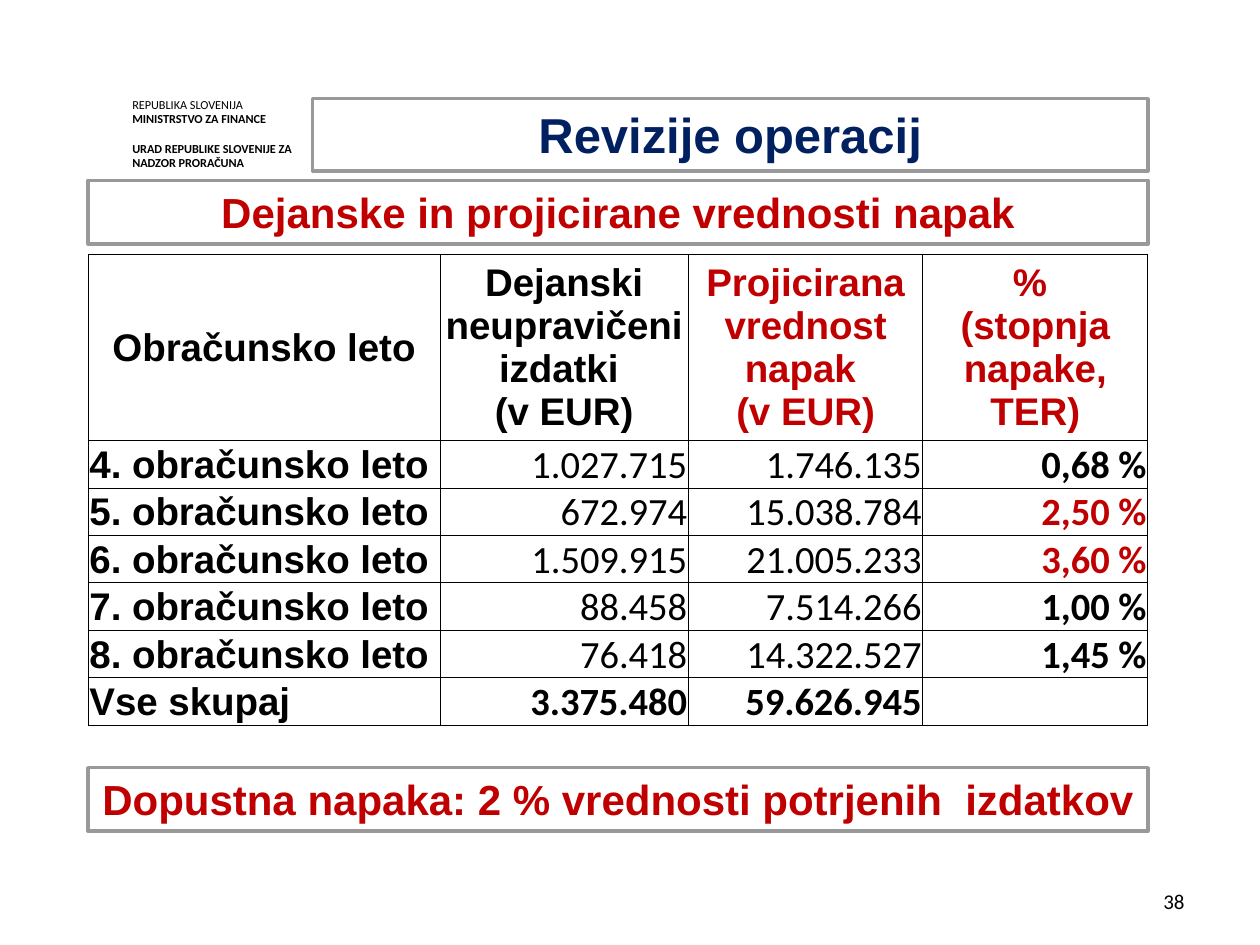
from lxml.etree import SubElement
from pptx import Presentation
from pptx.dml.color import RGBColor
from pptx.enum.shapes import MSO_SHAPE as Shape
from pptx.enum.text import MSO_ANCHOR as Anchor, PP_ALIGN as Align
from pptx.oxml.ns import qn
from pptx.util import Pt

BLACK = RGBColor(0x00, 0x00, 0x00)
WHITE = RGBColor(0xFF, 0xFF, 0xFF)
RED = RGBColor(0xC0, 0x00, 0x00)
NAVY = RGBColor(0x00, 0x20, 0x60)
GREY = RGBColor(0x99, 0x99, 0x99)

LEFT, WIDTH = 50.4, 605.5
COLUMN_WIDTHS = (201, 142, 134, 128.5)
HEADER_HEIGHT, ROW_HEIGHT = 106.5, 27

HEADERS = (
    (["Obračunsko leto"], BLACK),
    (["Dejanski neupravičeni izdatki ", "(v EUR)"], BLACK),
    (["Projicirana vrednost napak ", "(v EUR)"], RED),
    (["% ", "(stopnja napake, TER)"], RED),
)
# Label, actual value, projected value, error rate, colour of the rate
YEARS = (
    ("4. obračunsko leto", "1.027.715", "1.746.135", "0,68 %", BLACK),
    ("5. obračunsko leto", "672.974", "15.038.784", "2,50 %", RED),
    ("6. obračunsko leto", "1.509.915", "21.005.233", "3,60 %", RED),
    ("7. obračunsko leto", "88.458", "7.514.266", "1,00 %", BLACK),
    ("8. obračunsko leto", "76.418", "14.322.527", "1,45 %", BLACK),
)
TOTALS = ("Vse skupaj", "3.375.480", "59.626.945", "")


def write(paragraph, text, size=22, font="Arial", color=BLACK, bold=False,
          align=Align.LEFT, line_spacing=None, space_before=0):
    """Put formatted text into a paragraph."""
    paragraph.alignment = align
    if line_spacing:
        paragraph.line_spacing = Pt(line_spacing)
    if space_before:
        paragraph.space_before = Pt(space_before)
    run = paragraph.add_run()
    run.text = text
    run.font.size = Pt(size)
    run.font.name = font
    run.font.bold = bold
    run.font.color.rgb = color


class SlideBuilder:
    heading_font = "Arial"
    number_font = "Calibri"
    cell_margin = 0.72

    def __init__(self, slide):
        self.slide = slide

    def text_box(self, left, top, width, height, margin=None, anchor=Anchor.TOP):
        box = self.slide.shapes.add_textbox(Pt(left), Pt(top), Pt(width), Pt(height))
        frame = box.text_frame
        frame.word_wrap = True
        frame.vertical_anchor = anchor
        if margin is not None:
            frame.margin_left = frame.margin_right = Pt(margin)
            frame.margin_top = frame.margin_bottom = Pt(margin)
        return frame

    def banner(self, text, left, top, width, height, size=24, color=RED):
        shape = self.slide.shapes.add_shape(
            Shape.RECTANGLE, Pt(left), Pt(top), Pt(width), Pt(height))
        shape.shadow.inherit = False
        shape.fill.solid()
        shape.fill.fore_color.rgb = WHITE
        shape.line.color.rgb = GREY
        shape.line.width = Pt(2)
        frame = shape.text_frame
        frame.word_wrap = True
        frame.vertical_anchor = Anchor.TOP
        write(frame.paragraphs[0], text, size=size, font=self.heading_font,
              color=color, bold=True, align=Align.CENTER)

    def table(self, left, top, column_widths, row_heights):
        table = self.slide.shapes.add_table(
            len(row_heights), len(column_widths), Pt(left), Pt(top),
            Pt(sum(column_widths)), Pt(sum(row_heights))).table
        for column, width in zip(table.columns, column_widths):
            column.width = Pt(width)
        for row, height in zip(table.rows, row_heights):
            row.height = Pt(height)
        for cell in table.iter_cells():
            self.style_cell(cell)
        return table

    def style_cell(self, cell):
        cell.margin_left = cell.margin_right = cell.margin_top = Pt(self.cell_margin)
        cell.margin_bottom = 0
        properties = cell._tc.get_or_add_tcPr()
        for side in ("a:lnL", "a:lnR", "a:lnT", "a:lnB"):
            border = SubElement(properties, qn(side), w=str(Pt(0.5)))
            fill = SubElement(border, qn("a:solidFill"))
            SubElement(fill, qn("a:srgbClr"), val=str(BLACK))
        cell.fill.solid()
        cell.fill.fore_color.rgb = WHITE

    def cell_text(self, cell, lines, anchor=Anchor.MIDDLE, **text_format):
        cell.vertical_anchor = anchor
        frame = cell.text_frame
        for index, line in enumerate(lines):
            paragraph = frame.add_paragraph() if index else frame.paragraphs[0]
            write(paragraph, line, **text_format)

    def data_row(self, table, row, texts, bolds, rate_color=BLACK):
        label, *values = texts
        self.cell_text(table.cell(row, 0), [label], font=self.heading_font, bold=True)
        colors = (BLACK, BLACK, rate_color)
        for column, (value, bold, color) in enumerate(zip(values, bolds, colors), 1):
            if value:
                self.cell_text(table.cell(row, column), [value], anchor=Anchor.BOTTOM,
                               font=self.number_font, bold=bold, color=color,
                               align=Align.RIGHT)


def main():
    presentation = Presentation()
    presentation.slide_width = Pt(720)
    presentation.slide_height = Pt(540)
    builder = SlideBuilder(presentation.slides.add_slide(presentation.slide_layouts[6]))

    # Letterhead
    frame = builder.text_box(75.6, 55.4, 95, 40.3, margin=0)
    letterhead = {"size": 7, "font": "Calibri", "line_spacing": 8.4}
    write(frame.paragraphs[0], "REPUBLIKA SLOVENIJA", **letterhead)
    write(frame.add_paragraph(), "MINISTRSTVO ZA FINANCE", bold=True, **letterhead)
    write(frame.add_paragraph(), "URAD REPUBLIKE SLOVENIJE ZA NADZOR PRORAČUNA",
          bold=True, space_before=8.4, **letterhead)

    # Slide number
    frame = builder.text_box(516, 500.5, 168, 28.8, anchor=Anchor.MIDDLE)
    write(frame.paragraphs[0], "38", size=12, font="Calibri", align=Align.RIGHT)

    # Table of errors by accounting year
    table = builder.table(LEFT, 145.2, COLUMN_WIDTHS,
                          [HEADER_HEIGHT] + [ROW_HEIGHT] * (len(YEARS) + 1))
    for column, (lines, color) in enumerate(HEADERS):
        builder.cell_text(table.cell(0, column), lines, color=color, bold=True,
                          align=Align.CENTER)
    for row, (*texts, rate_color) in enumerate(YEARS, 1):
        builder.data_row(table, row, texts, (False, False, True), rate_color)
    builder.data_row(table, len(YEARS) + 1, TOTALS, (True, True, True))

    # Framed headings
    builder.banner("Dopustna napaka: 2 % vrednosti potrjenih  izdatkov",
                   LEFT, 438.7, WIDTH, 36.3)
    builder.banner("Revizije operacij", 178.6, 56.4, 477.3, 41.2, size=28, color=NAVY)
    builder.banner("Dejanske in projicirane vrednosti napak", LEFT, 103, WIDTH, 36.3)

    presentation.save("out.pptx")


if __name__ == "__main__":
    main()
